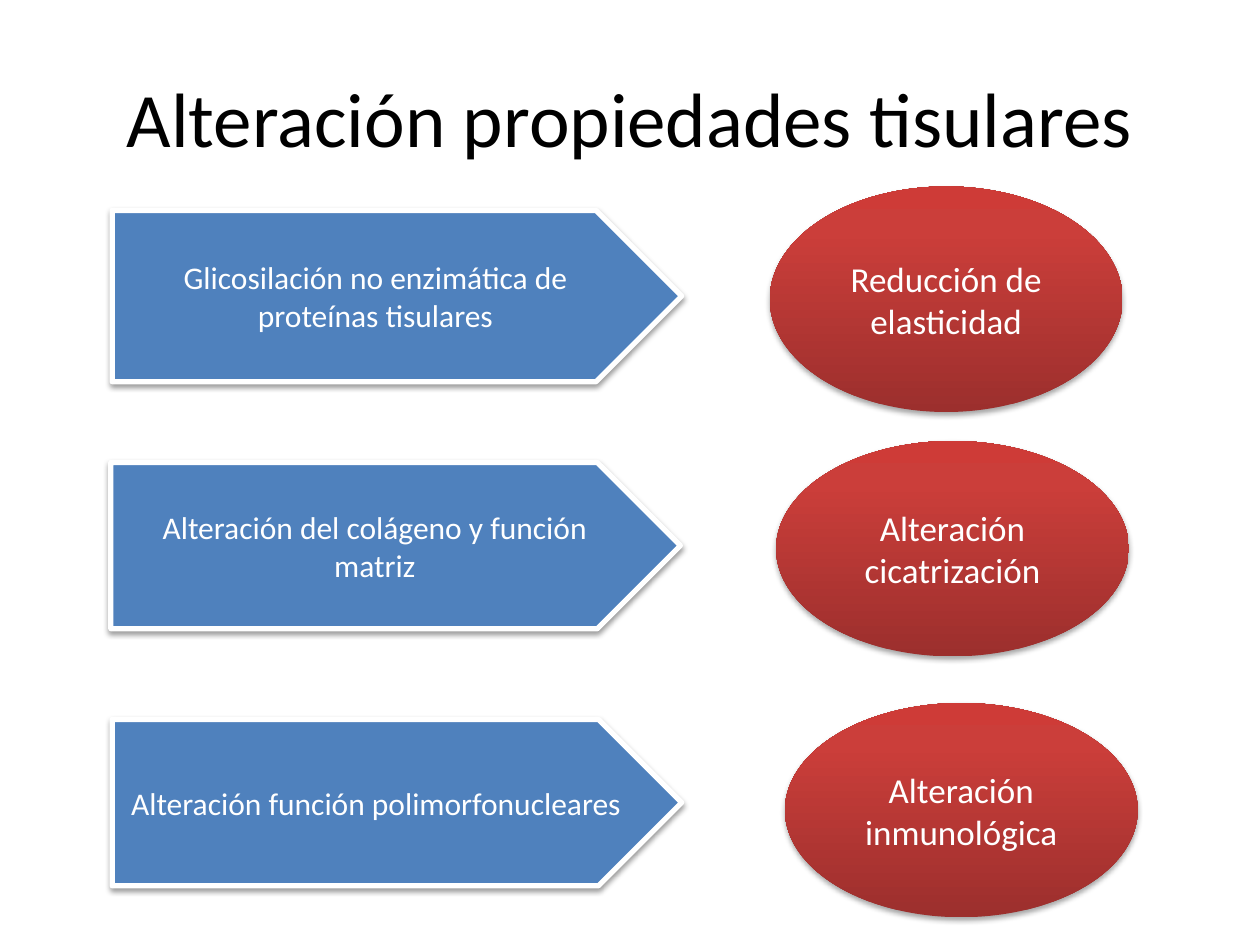
from copy import deepcopy

from lxml import etree
from pptx import Presentation
from pptx.dml.color import RGBColor
from pptx.enum import shapes, text
from pptx.oxml.ns import qn
from pptx.util import Inches, Pt

BLACK = RGBColor(0x00, 0x00, 0x00)
WHITE = RGBColor(0xFF, 0xFF, 0xFF)
BLUE = RGBColor(0x4F, 0x81, 0xBD)
RED_STOPS = [
    (0, RGBColor(0x9C, 0x2F, 0x2D)),
    (0.8, RGBColor(0xCB, 0x3E, 0x3A)),
    (1, RGBColor(0xCE, 0x3B, 0x37)),
]
FONT = "Calibri"

# Each row: cause and its box, effect and its box (left, top, width, height)
ROWS = [
    ("Glicosilación no enzimática de proteínas tisulares", (0.89, 1.67, 4.52, 1.36),
     "Reducción de elasticidad", (6.11, 1.48, 2.8, 1.79)),
    ("Alteración del colágeno y función matriz", (0.88, 3.67, 4.52, 1.32),
     "Alteración cicatrización", (6.16, 3.5, 2.8, 1.71)),
    ("Alteración función polimorfonucleares", (0.89, 5.71, 4.52, 1.32),
     "Alteración inmunológica", (6.23, 5.58, 2.8, 1.7)),
]


def write(shape, wording, size, color):
    frame = shape.text_frame
    frame.text = wording
    frame.word_wrap = True
    frame.vertical_anchor = text.MSO_ANCHOR.MIDDLE
    paragraph = frame.paragraphs[0]
    paragraph.alignment = text.PP_ALIGN.CENTER
    font = paragraph.runs[0].font
    font.name, font.size, font.color.rgb = FONT, Pt(size), color


def drop_shadow(shape, blur, distance, opacity):
    shape.shadow.inherit = False
    effects = shape._element.spPr.find(qn("a:effectLst"))
    shadow = etree.SubElement(
        effects, qn("a:outerShdw"), blurRad=str(Pt(blur)), dist=str(Pt(distance)),
        dir="5400000", rotWithShape="0")
    color = etree.SubElement(shadow, qn("a:srgbClr"), val=str(BLACK))
    etree.SubElement(color, qn("a:alpha"), val=str(opacity * 1000))


def red_gradient(shape):
    fill = shape.fill
    fill.gradient()
    fill.gradient_angle = 90
    # The new gradient has two stops; a third is needed
    stop_list = shape._element.spPr.find(".//" + qn("a:gsLst"))
    stop_list.append(deepcopy(stop_list[-1]))
    for stop, (position, color) in zip(fill.gradient_stops, RED_STOPS):
        stop.position = position
        stop.color.rgb = color


def add_cause(slide, box, wording):
    arrow = slide.shapes.add_shape(shapes.MSO_SHAPE.PENTAGON, *map(Inches, box))
    arrow.fill.solid()
    arrow.fill.fore_color.rgb = BLUE
    arrow.line.color.rgb = WHITE
    arrow.line.width = Pt(3)
    drop_shadow(arrow, 3.1, 1.6, 38)
    write(arrow, wording, 18, WHITE)


def add_effect(slide, box, wording):
    ellipse = slide.shapes.add_shape(shapes.MSO_SHAPE.OVAL, *map(Inches, box))
    red_gradient(ellipse)
    ellipse.line.fill.background()
    drop_shadow(ellipse, 3.1, 1.8, 35)
    write(ellipse, wording, 20, WHITE)


def add_title(slide, box, wording):
    title = slide.shapes.title
    title.left, title.top, title.width, title.height = map(Inches, box)
    write(title, wording, 44, BLACK)


def main():
    prs = Presentation()
    prs.slide_width, prs.slide_height = Inches(10), Inches(7.5)
    slide = prs.slides.add_slide(prs.slide_layouts[5])  # title only

    add_title(slide, (0.5, 0.3, 9, 1.25), "Alteración propiedades tisulares")
    for cause, cause_box, effect, effect_box in ROWS:
        add_cause(slide, cause_box, cause)
        add_effect(slide, effect_box, effect)

    prs.save("out.pptx")


if __name__ == "__main__":
    main()
